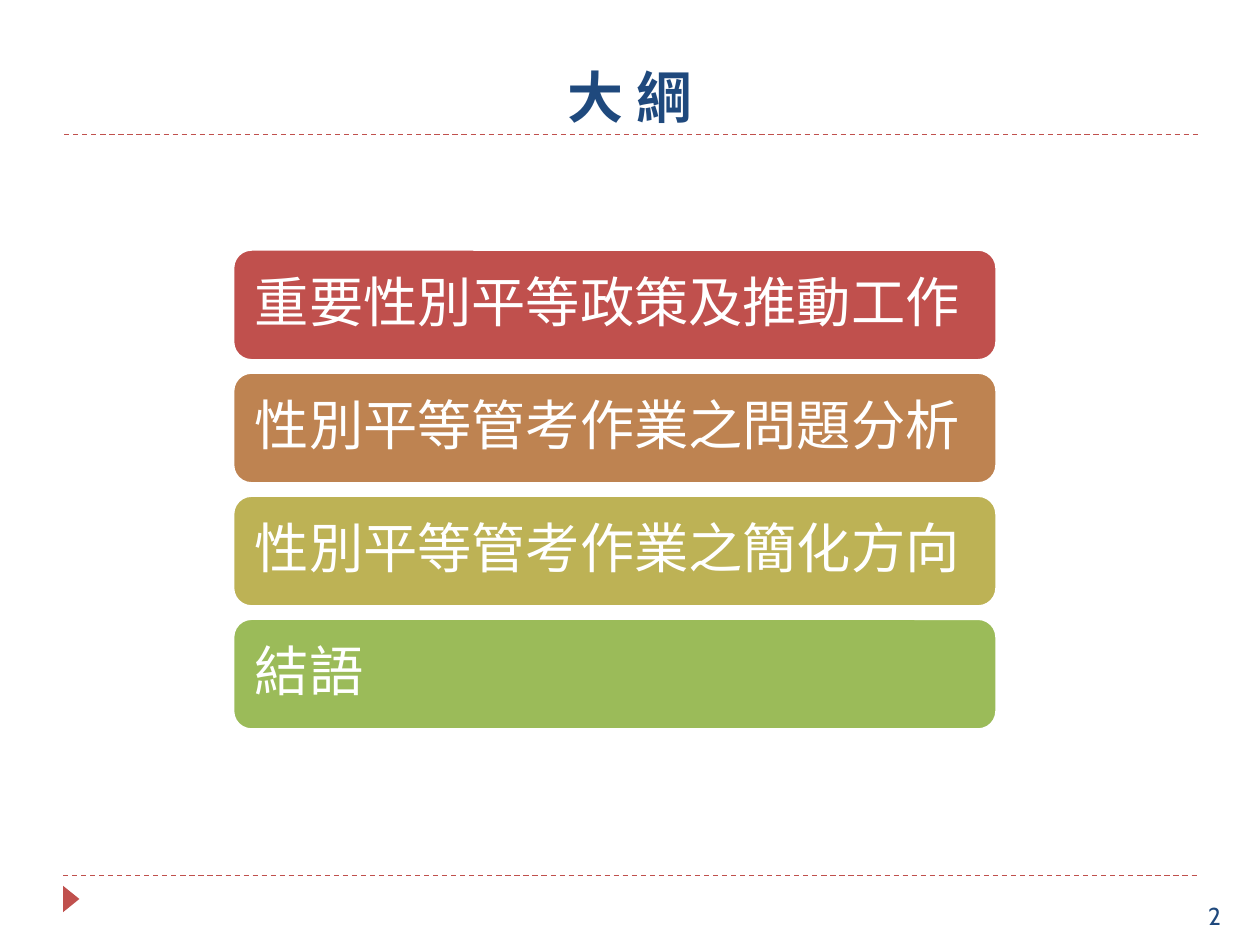
from lxml import etree
from pptx import Presentation
from pptx import util as u
from pptx.dml.color import RGBColor
from pptx.enum import dml, shapes, text
from pptx.oxml.ns import qn

WIDTH, HEIGHT = 10, 7.5
RED = RGBColor(0xC0, 0x50, 0x4D)
COPPER = RGBColor(0xBE, 0x83, 0x51)
OLIVE = RGBColor(0xBD, 0xB2, 0x55)
GREEN = RGBColor(0x9B, 0xBB, 0x59)
NAVY = RGBColor(0x1F, 0x49, 0x7D)
WHITE = RGBColor(0xFF, 0xFF, 0xFF)
CJK = "Noto Sans CJK SC"

TOPICS = [
    ("重要性別平等政策及推動工作", RED),
    ("性別平等管考作業之問題分析", COPPER),
    ("性別平等管考作業之簡化方向", OLIVE),
    ("結語", GREEN),
]


def place(sp, box):
    sp.left, sp.top, sp.width, sp.height = (u.Inches(v) for v in box)


def write(sp, words, size, color, font=CJK, bold=False, align=text.PP_ALIGN.LEFT,
          anchor=text.MSO_ANCHOR.TOP, inset=None, spacing=None, after=None):
    tf = sp.text_frame
    tf.word_wrap = True
    tf.vertical_anchor = anchor
    if inset is not None:
        tf.margin_left = tf.margin_right = u.Inches(inset)
        tf.margin_top = tf.margin_bottom = u.Inches(inset)
    p = tf.paragraphs[0]
    p.alignment = align
    if spacing:
        p.line_spacing = spacing
    if after:
        p.space_after = u.Pt(after)
    r = p.add_run()
    r.text = words
    r.font.size = u.Pt(size)
    r.font.bold = bold
    r.font.name = font
    r.font.color.rgb = color
    etree.SubElement(r.font._element, qn("a:ea")).set("typeface", CJK)


def dashed_rule(s, x, y, width):
    line = s.shapes.add_connector(
        shapes.MSO_CONNECTOR.STRAIGHT,
        u.Inches(x), u.Inches(y), u.Inches(x + width), u.Inches(y))
    line.line.color.rgb = RED
    line.line.width = u.Pt(0.75)
    line.line.dash_style = dml.MSO_LINE.DASH
    etree.SubElement(line._element.spPr, qn("a:effectLst"))


def header(s, box):
    x, y, w, h = box
    dashed_rule(s, x + 0.01, y + h - 0.01, w)
    place(s.shapes.title, box)
    write(s.shapes.title, "大 綱", 32, NAVY, font="Roboto Slab", bold=True,
          align=text.PP_ALIGN.CENTER, anchor=text.MSO_ANCHOR.BOTTOM)


def topic_list(s, box, topics, gap_share=0.11):
    x, y, w, h = box
    n = len(topics)
    bar_height = h / (n + (n - 1) * gap_share)
    for i, (words, color) in enumerate(topics):
        top = y + i * bar_height * (1 + gap_share)
        sp = s.shapes.add_shape(shapes.MSO_SHAPE.ROUNDED_RECTANGLE, 0, 0, 0, 0)
        place(sp, (x, top, w, bar_height))
        sp.shadow.inherit = False
        sp.fill.solid()
        sp.fill.fore_color.rgb = color
        sp.line.color.rgb = WHITE
        sp.line.width = u.Pt(1.5)
        write(sp, words, 31, WHITE, anchor=text.MSO_ANCHOR.MIDDLE,
              inset=0.13, spacing=0.9, after=11)


def footer(s, box, number):
    x, y, w, h = box
    dashed_rule(s, x, y, w)
    marker = s.shapes.add_shape(shapes.MSO_SHAPE.ISOSCELES_TRIANGLE, 0, 0, 0, 0)
    place(marker, (x - 0.04, y + 0.12, 0.21, 0.13))
    marker.rotation = 90
    marker.shadow.inherit = False
    marker.fill.solid()
    marker.fill.fore_color.rgb = RED
    marker.line.fill.background()
    page = s.shapes.add_textbox(0, 0, 0, 0)
    place(page, (x + w - 0.01, y + h - 0.4, 0.51, 0.4))
    write(page, str(number), 14, NAVY, font="Cabin")


def main():
    prs = Presentation()
    prs.slide_width, prs.slide_height = u.Inches(WIDTH), u.Inches(HEIGHT)
    s = prs.slides.add_slide(prs.slide_layouts[5])
    margin = WIDTH * 0.05
    content = WIDTH - 2 * margin
    header(s, (margin, 0.17, content, 0.91))
    topic_list(s, (1.85, 1.98, 6.06, 3.81), TOPICS)
    footer(s, (margin, 6.95, content, HEIGHT - 6.95), 2)
    prs.save("out.pptx")


if __name__ == "__main__":
    main()
